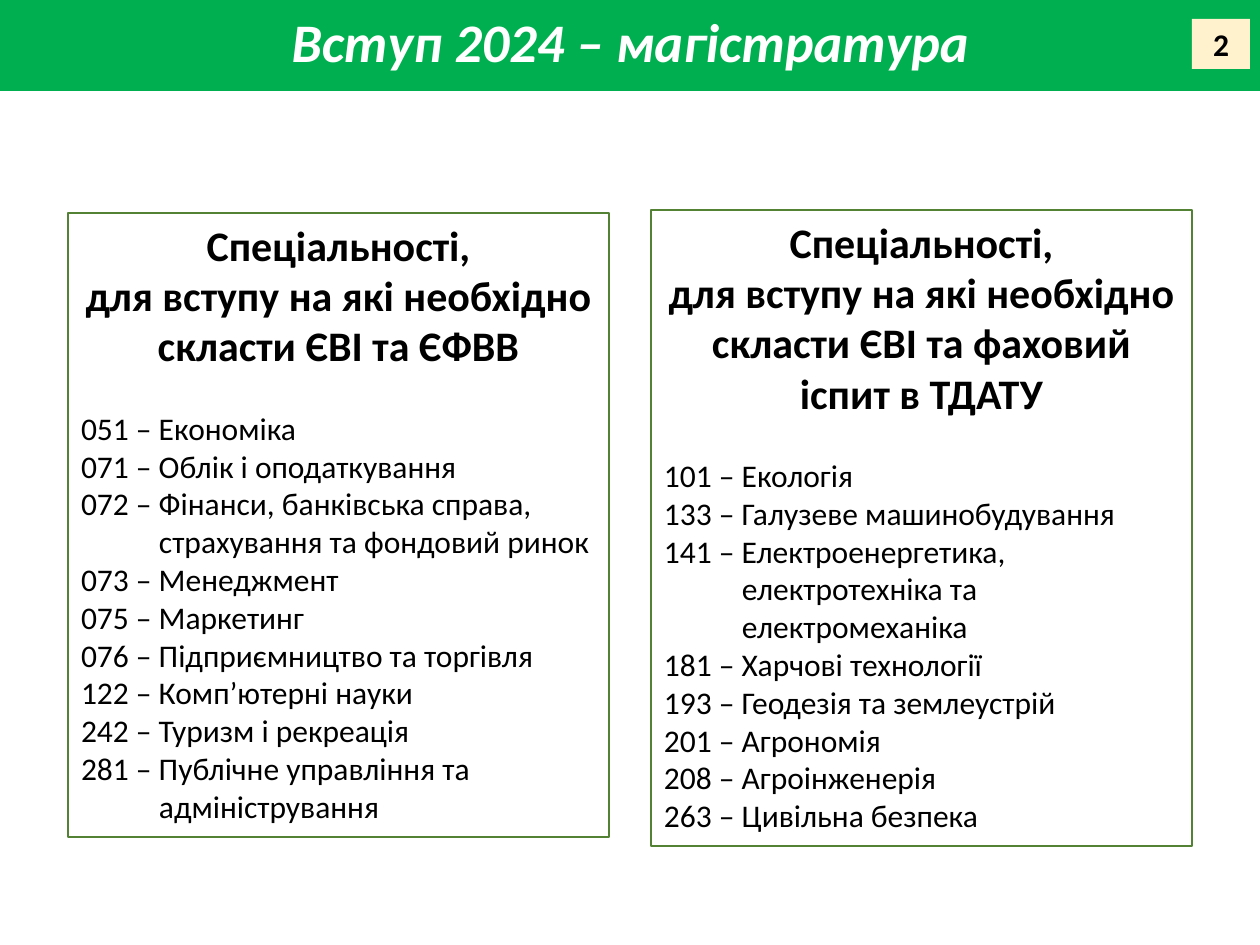
"""Build the admissions slide with two framed lists of specialities."""
from pptx import Presentation
from pptx.dml.color import RGBColor
from pptx.enum.shapes import MSO_SHAPE as Shape
from pptx.enum.text import MSO_ANCHOR as Anchor, MSO_AUTO_SIZE as AutoSize, PP_ALIGN as Align
from pptx.util import Emu, Pt

GREEN = RGBColor(0x00, 0xB0, 0x50)
DARK_GREEN = RGBColor(0x54, 0x82, 0x35)
CREAM = RGBColor(0xFF, 0xF2, 0xCC)
WHITE = RGBColor(0xFF, 0xFF, 0xFF)
BLACK = RGBColor(0x00, 0x00, 0x00)

EXTERNAL_EXAM = [
    "051 – Економіка",
    "071 – Облік і оподаткування",
    "072 – Фінанси, банківська справа,\vстрахування та фондовий ринок",
    "073 – Менеджмент",
    "075 – Маркетинг",
    "076 – Підприємництво та торгівля",
    "122 – Комп’ютерні науки",
    "242 – Туризм і рекреація",
    "281 – Публічне управління та\vадміністрування",
]
UNIVERSITY_EXAM = [
    "101 – Екологія",
    "133 – Галузеве машинобудування",
    "141 – Електроенергетика,\vелектротехніка та\vелектромеханіка",
    "181 – Харчові технології",
    "193 – Геодезія та землеустрій",
    "201 – Агрономія",
    "208 – Агроінженерія",
    "263 – Цивільна безпека",
]


def px(length):
    """Turn pixels into EMU."""
    return Emu(round(length * 914400 / 126))


def apply(target, values):
    """Set each attribute named in values on the target."""
    for name, value in values.items():
        setattr(target, name, value)


class AdmissionsSlide:
    """Hold the style and the current slide."""

    FONT = "Calibri"
    HANGING = 78

    def __init__(self, deck):
        """Add a slide with a title and two body placeholders."""
        self.slide = deck.slides.add_slide(deck.slide_layouts[3])

    def place(self, shape, box, anchor, inset=(13, 6)):
        """Position a shape and prepare its text frame."""
        apply(shape, dict(zip(("left", "top", "width", "height"), map(px, box))))
        side, edge = map(px, inset)
        apply(shape.text_frame, {
            "word_wrap": True, "auto_size": AutoSize.NONE, "vertical_anchor": anchor,
            "margin_left": side, "margin_right": side,
            "margin_top": edge, "margin_bottom": edge,
        })

    def style_text(self, paragraph, text, size, color=BLACK, bold=False, italic=False, **layout):
        """Fill a paragraph with styled text."""
        paragraph.text = text
        apply(paragraph, {"space_before": Pt(0), **layout})
        for run in paragraph.runs:
            apply(run.font, {"name": self.FONT, "size": Pt(size), "bold": bold, "italic": italic})
            run.font.color.rgb = color

    def title(self, text, box):
        """Turn the title placeholder into a filled band."""
        band = self.slide.shapes.title
        self.place(band, box, Anchor.MIDDLE, (16, 16))
        band.fill.solid()
        band.fill.fore_color.rgb = GREEN
        self.style_text(band.text_frame.paragraphs[0], text, 31, WHITE, True, True,
                        alignment=Align.CENTER, line_spacing=0.9)

    def number(self, text, box):
        """Add the slide number badge."""
        badge = self.slide.shapes.add_shape(Shape.RECTANGLE, *map(px, box))
        badge.shadow.inherit = False
        badge.fill.solid()
        badge.fill.fore_color.rgb = CREAM
        badge.line.fill.background()
        self.place(badge, box, Anchor.MIDDLE)
        self.style_text(badge.text_frame.paragraphs[0], text, 18, bold=True, alignment=Align.CENTER)

    def specialities(self, index, box, heading, items):
        """Fill a body placeholder with a heading and a hanging list."""
        panel = self.slide.placeholders[index]
        self.place(panel, box, Anchor.TOP)
        panel.line.color.rgb = DARK_GREEN
        panel.line.width = Pt(0.75)
        frame = panel.text_frame
        self.style_text(frame.paragraphs[0], heading, 24, bold=True, alignment=Align.CENTER)
        self.unbullet(frame.paragraphs[0])
        for position, item in enumerate(items):
            entry = frame.add_paragraph()
            gap = Pt(0 if position else 22)
            self.style_text(entry, item, 18, alignment=Align.LEFT, space_before=gap)
            self.unbullet(entry, self.HANGING)

    def unbullet(self, paragraph, hanging=0):
        """Remove the bullet and set a hanging indent."""
        properties = paragraph._p.get_or_add_pPr()
        properties.set("marL", str(px(hanging)))
        properties.set("indent", str(-px(hanging)))
        properties.append(properties.makeelement(
            "{http://schemas.openxmlformats.org/drawingml/2006/main}buNone", {}))


def main():
    """Build and save the slide."""
    deck = Presentation()
    apply(deck, {"slide_width": px(1260), "slide_height": px(945)})
    page = AdmissionsSlide(deck)
    page.title("Вступ 2024 – магістратура", (0, -1, 1260, 92))
    page.number("2", (1192, 19, 58, 50))
    opening = "Спеціальності,\vдля вступу на які необхідно скласти ЄВІ та "
    page.specialities(1, (68, 213, 541, 624), opening + "ЄФВВ", EXTERNAL_EXAM)
    page.specialities(2, (651, 210, 541, 636), opening + "фаховий іспит в ТДАТУ", UNIVERSITY_EXAM)
    deck.save("out.pptx")


if __name__ == "__main__":
    main()
